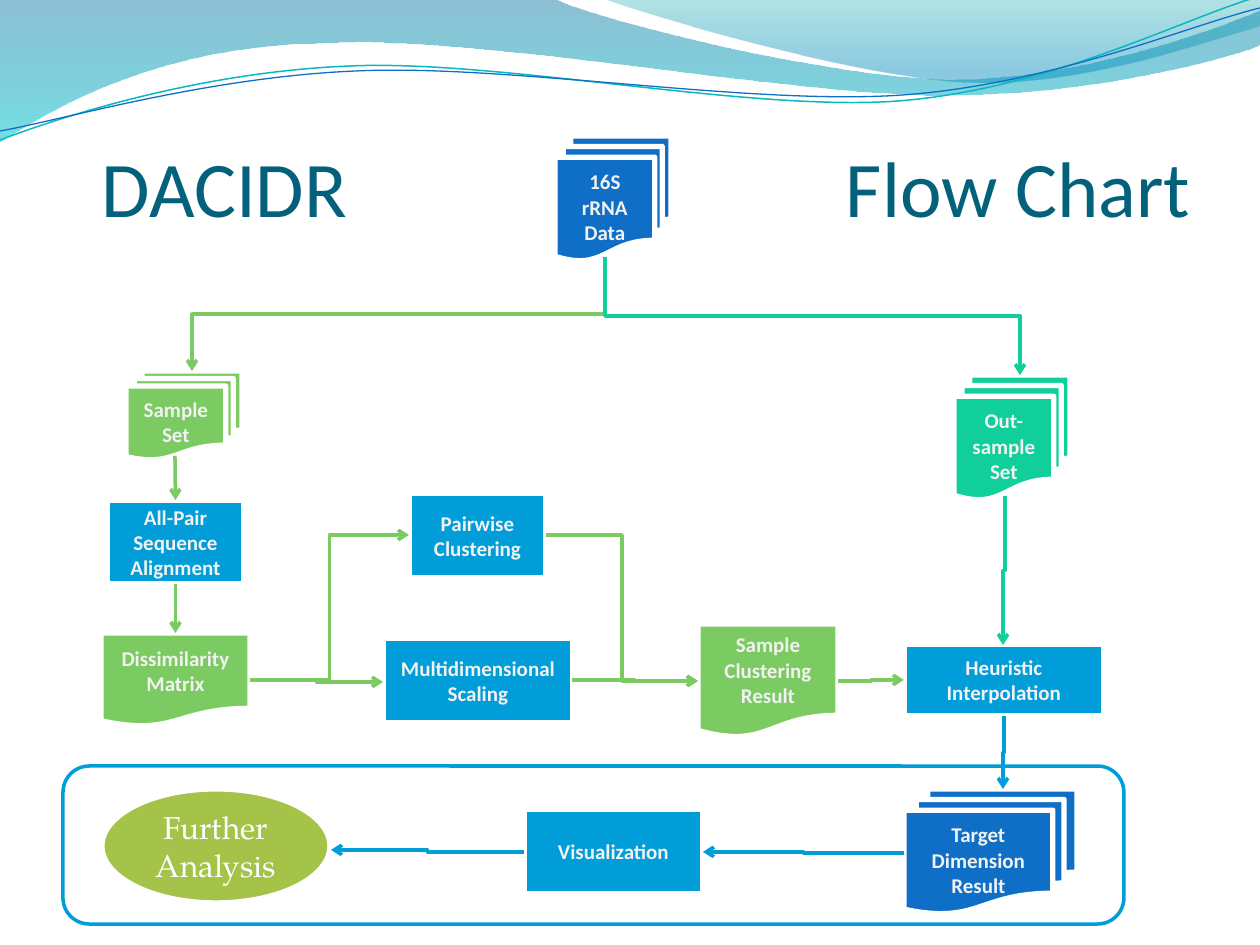
"""Build the DACIDR flow chart slide."""
from itertools import chain, islice
from lxml.etree import SubElement
from pptx import Presentation
from pptx.dml.color import RGBColor
from pptx.enum.shapes import MSO_CONNECTOR, MSO_SHAPE
from pptx.enum.text import MSO_ANCHOR, MSO_AUTO_SIZE, PP_ALIGN
from pptx.oxml.ns import qn
from pptx.util import Pt

SCALE = 914400 / 126
COLORS = {
    "white": "FFFFFF", "label": "F2F2F2", "title": "04617B", "navy": "0F6FC6",
    "blue": "009DD9", "green": "7CCA62", "teal": "10CF9B", "olive": "A5C249",
    "wave": "0AB8BF", "deep": "0074A1", "aqua": "00C6CF", "sea": "00A1A9", "sky": "008BBF",
}
DOCUMENT = MSO_SHAPE.FLOWCHART_DOCUMENT
DOCUMENTS = MSO_SHAPE.FLOWCHART_MULTIDOCUMENT
PROCESS = MSO_SHAPE.FLOWCHART_PROCESS

BANDS = [
    ((0, 0),
     [[(554, -1)], [(600, 21), (837, 79), (955, 79)], [(1075, 79), (1207, 33), (1260, 11)],
      [(1261, 45)], [(1239, 55), (1096, 96), (940, 95)],
      [(783, 95), (481, 35), (324, 43)], [(163, 45), (58, 105), (-1, 142)]],
     [(0, "deep", 45), (1, "aqua", 55)]),
    ((604, -1),
     [[(641, 14), (859, 78), (969, 82)], [(1079, 87), (1211, 40), (1260, 26)], [(1260, 0)]],
     [(0, "sea", 30), (0.8, "sky", 45)]),
]
RIPPLES = [
    ((0, 140),
     [[(60, 117), (199, 72), (349, 66)], [(498, 59), (747, 112), (898, 101)],
      [(1050, 89), (1182, 19), (1257, -3)]], "wave", 0.85),
    ((0, 131),
     [[(59, 121), (207, 77), (357, 71)], [(508, 64), (752, 106), (903, 95)],
      [(1053, 84), (1187, 26), (1260, 8)]], "navy", 0.75),
]
TITLE = "DACIDR\tFlow Chart"
TITLE_BOX = (102, 116, 1134, 117)
TITLE_TAB = 744
RESULT_FRAME = (63, 766, 1061, 158)
STEPS = [
    ("16S rRNA Data", DOCUMENTS, "navy", (555, 136, 116, 125)),
    ("All-Pair Sequence Alignment", PROCESS, "blue", (107, 500, 137, 84)),
    ("Heuristic Interpolation", PROCESS, "blue", (904, 644, 200, 72)),
    ("Pairwise Clustering", PROCESS, "blue", (409, 493, 137, 85)),
    ("Multidimensional Scaling", PROCESS, "blue", (383, 638, 190, 85)),
    ("Dissimilarity Matrix", DOCUMENT, "green", (101, 633, 149, 94)),
    ("Sample Clustering Result", DOCUMENT, "green", (698, 624, 140, 114)),
    ("Target Dimension Result", DOCUMENTS, "navy", (904, 789, 173, 125)),
    ("Visualization", PROCESS, "blue", (524, 809, 179, 85)),
    ("Out-sample Set", DOCUMENTS, "teal", (954, 375, 116, 125)),
    ("Sample Set", DOCUMENTS, "green", (126, 371, 116, 89)),
    ("Further Analysis", MSO_SHAPE.OVAL, "olive", (102, 789, 228, 114)),
]
DOWN_ARROWS = [
    ((605, 257), (192, 371), "green"), ((605, 257), (1020, 375), "teal"),
    ((1004, 716), (1003, 789), "blue"), ((1005, 496), (1003, 645), "teal"),
]
SIDE_ARROWS = [
    ((250, 680), (409, 535), "green"), ((250, 680), (383, 682), "green"),
    ((546, 535), (698, 681), "green"), ((572, 680), (698, 681), "green"),
    ((838, 681), (904, 680), "green"),
    ((904, 853), (703, 852), "blue"), ((524, 852), (331, 850), "blue"),
]
SAMPLE_OUTLET = (175, 456)


def emu(*lengths):
    return [round(length * SCALE) for length in lengths]


def rgb(name):
    return RGBColor.from_string(COLORS[name])


def add_wave(slide, start, segments, close):
    outline = slide.shapes.build_freeform(*emu(*start))
    outline.add_line_segments([emu(*point) for point in chain(*segments)], close=close)
    wave = outline.convert_to_shape()
    wave.shadow.inherit = False
    path = next(wave.element.spPr.iter(qn("a:path")))
    corners = iter(path.findall(qn("a:lnTo")))
    for segment in segments:
        lines = list(islice(corners, len(segment)))
        if len(lines) == 3:
            curve = SubElement(path, qn("a:cubicBezTo"))
            lines[0].addprevious(curve)
            for line in lines:
                curve.append(line[0])
                path.remove(line)
    return wave


def move_to_master(slide, wave):
    master_shapes = slide.slide_layout.slide_master.shapes
    wave.element.nvSpPr.cNvPr.set("id", str(100 + len(master_shapes)))
    master_shapes.element.append(wave.element)


def add_band(slide, start, segments, stops):
    band = add_wave(slide, start, segments, True)
    band.line.fill.background()
    band.fill.gradient()
    band.fill.gradient_angle = 270
    for stop, (position, color, _) in zip(band.fill.gradient_stops, stops):
        stop.position = position
        stop.color.rgb = rgb(color)
    for tint, (_, _, opacity) in zip(band.element.spPr.iter(qn("a:srgbClr")), stops):
        SubElement(tint, qn("a:alpha"), val=str(opacity * 1000))
    move_to_master(slide, band)


def add_ripple(slide, start, segments, color, width):
    ripple = add_wave(slide, start, segments, False)
    ripple.fill.background()
    ripple.line.color.rgb = rgb(color)
    ripple.line.width = Pt(width)
    move_to_master(slide, ripple)


def add_box(shapes, kind, box, fill, line, width):
    node = shapes.add_shape(kind, *emu(*box))
    node.shadow.inherit = False
    node.fill.solid()
    node.fill.fore_color.rgb = rgb(fill)
    node.line.color.rgb = rgb(line)
    node.line.width = Pt(width)
    return node


def format_text(paragraph, align, font_name, size, color, bold=False):
    paragraph.alignment = align
    font = paragraph.runs[0].font
    font.name, font.size, font.bold = font_name, Pt(size), bold
    font.color.rgb = rgb(color)


def add_step(shapes, label, kind, color, box):
    step = add_box(shapes, kind, box, color, "white", 3)
    frame = step.text_frame
    frame.word_wrap = True
    frame.vertical_anchor = MSO_ANCHOR.MIDDLE
    frame.text = label
    style = ("TeX Gyre Pagella", 18, "white") if kind == MSO_SHAPE.OVAL else ("Calibri", 12, "label", True)
    format_text(frame.paragraphs[0], PP_ALIGN.CENTER, *style)
    return step


def add_arrow(shapes, begin, end, color, kind=MSO_CONNECTOR.ELBOW):
    arrow = shapes.add_connector(kind, *emu(*begin, *end))
    arrow.line.color.rgb = rgb(color)
    arrow.line.width = Pt(2)
    SubElement(arrow.line._get_or_add_ln(), qn("a:tailEnd"), type="arrow")
    SubElement(arrow.element.spPr, qn("a:effectLst"))
    return arrow


def add_down_arrow(shapes, begin, end, color):
    (x1, y1), (x2, y2) = begin, end
    cx, cy, dx, dy = (x1 + x2) / 2, (y1 + y2) / 2, (x2 - x1) / 2, (y2 - y1) / 2
    arrow = add_arrow(shapes, (cx - dy, cy + dx), (cx + dy, cy - dx), color)
    arrow.element.spPr.find(qn("a:xfrm")).set("rot", "5400000")


def set_title(title):
    title.left, title.top, title.width, title.height = emu(*TITLE_BOX)
    frame = title.text_frame
    frame.auto_size = MSO_AUTO_SIZE.NONE
    frame.vertical_anchor = MSO_ANCHOR.BOTTOM
    frame.margin_left = frame.margin_right = frame.margin_bottom = 0
    frame.text = TITLE
    heading = frame.paragraphs[0]
    format_text(heading, PP_ALIGN.LEFT, "Calibri", 45, "title")
    tabs = SubElement(heading._p.get_or_add_pPr(), qn("a:tabLst"))
    SubElement(tabs, qn("a:tab"), pos=str(emu(TITLE_TAB)[0]), algn="l")


def main():
    deck = Presentation()
    deck.slide_width, deck.slide_height = emu(1260, 945)
    slide = deck.slides.add_slide(deck.slide_layouts[5])
    shapes = slide.shapes
    for band in BANDS:
        add_band(slide, *band)
    for ripple in RIPPLES:
        add_ripple(slide, *ripple)
    add_box(shapes, MSO_SHAPE.ROUNDED_RECTANGLE, RESULT_FRAME, "white", "blue", 2)
    set_title(shapes.title)
    steps = {step[0]: add_step(shapes, *step) for step in STEPS}
    for arrow in DOWN_ARROWS:
        add_down_arrow(shapes, *arrow)
    for arrow in SIDE_ARROWS:
        add_arrow(shapes, *arrow)
    alignment = steps["All-Pair Sequence Alignment"]
    to_alignment, to_matrix = [
        add_arrow(shapes, SAMPLE_OUTLET, SAMPLE_OUTLET, "green", MSO_CONNECTOR.STRAIGHT) for _ in range(2)]
    to_alignment.end_connect(alignment, 0)
    to_matrix.begin_connect(alignment, 2)
    to_matrix.end_connect(steps["Dissimilarity Matrix"], 0)
    deck.save("out.pptx")


if __name__ == "__main__":
    main()
